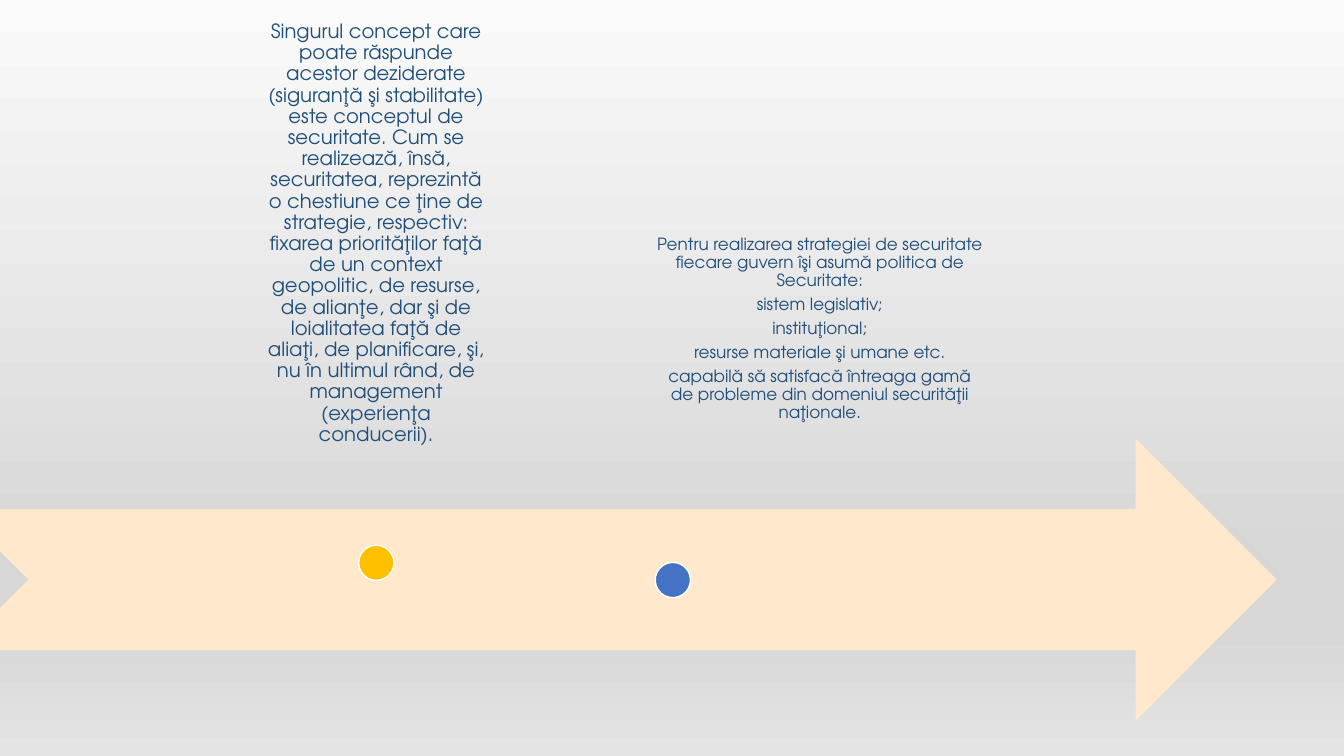
"""Builds the security strategy slide: two statements above a timeline arrow."""
from dataclasses import dataclass

from lxml.etree import SubElement
from pptx import Presentation
from pptx.dml.color import RGBColor
from pptx.enum.shapes import MSO_SHAPE
from pptx.enum.text import MSO_ANCHOR, PP_ALIGN
from pptx.oxml.ns import qn
from pptx.util import Inches, Pt


@dataclass(frozen=True)
class Theme:
    font: str = "TeX Gyre Adventor"
    text: str = "1F4E79"
    arrow: str = "FFE8CC"
    concept_dot: str = "FFC000"
    policy_dot: str = "4472C4"
    dot_outline: str = "FFFFFF"
    backdrop: tuple = ((0, "FAFAFA"), (74, "D7D7D7"), (83, "D7D7D7"), (100, "E4E4E4"))
    concept_size: int = 14
    policy_size: int = 12


theme = Theme()
COLUMNS, ROWS = 32, 18

deck = Presentation()
deck.slide_width, deck.slide_height = Inches(13.33), Inches(7.5)
slide = deck.slides.add_slide(deck.slide_layouts[6])


def cells(column, row, width, height):
    """Turn grid columns and rows into slide lengths."""
    across, down = deck.slide_width / COLUMNS, deck.slide_height / ROWS
    return int(column * across), int(row * down), int(width * across), int(height * down)


def add_filled(preset, place, color):
    """Add a preset shape with a plain fill and no outline."""
    shape = slide.shapes.add_shape(preset, *cells(*place))
    shape.shadow.inherit = False
    shape.fill.solid()
    shape.fill.fore_color.rgb = RGBColor.from_string(color)
    shape.line.fill.background()
    return shape


backdrop = slide.background.fill
backdrop.gradient()
backdrop.gradient_angle = 270
stops = slide.element.find(".//" + qn("a:gsLst"))
for old_stop in list(stops):
    stops.remove(old_stop)
for percent, color in theme.backdrop:
    stop = SubElement(stops, qn("a:gs"), pos=str(percent * 1000))
    SubElement(stop, qn("a:srgbClr"), val=color)

add_filled(MSO_SHAPE.NOTCHED_RIGHT_ARROW, (-1, 10.44, 31.4, 6.72), theme.arrow)

concept = [
    "Singurul concept care poate răspunde acestor deziderate (siguranţă şi stabilitate) "
    "este conceptul de securitate. Cum se realizează, însă, securitatea, reprezintă o "
    "chestiune ce ţine de strategie, respectiv: fixarea priorităţilor faţă de un context "
    "geopolitic, de resurse, de alianţe, dar şi de loialitatea faţă de aliaţi, de "
    "planificare, şi, nu în ultimul rând, de management (experienţa conducerii).",
]
policy = [
    "Pentru realizarea strategiei de securitate fiecare guvern îşi asumă politica de Securitate:",
    "sistem legislativ;",
    "instituţional;",
    "resurse materiale şi umane etc.",
    "capabilă să satisfacă întreaga gamă de probleme din domeniul securităţii naţionale.",
]
statements = [
    (concept, (6.1, 5.81, 5.71, 5.06), MSO_ANCHOR.BOTTOM, theme.concept_size, 0.11),
    (policy, (15.38, 5.4, 8.28, 6.72), MSO_ANCHOR.TOP, theme.policy_size, 0.09),
]
for sentences, place, anchor, size, inset in statements:
    frame = slide.shapes.add_textbox(*cells(*place)).text_frame
    frame.word_wrap = True
    frame.vertical_anchor = anchor
    for side in ("left", "top", "right", "bottom"):
        setattr(frame, f"margin_{side}", Inches(inset))
    frame.text = "\n".join(sentences)
    paragraph_format = {
        "alignment": PP_ALIGN.CENTER,
        "line_spacing": 0.9,
        "space_after": Pt(size * 0.35),
    }
    for paragraph in frame.paragraphs:
        for attribute, value in paragraph_format.items():
            setattr(paragraph, attribute, value)
        for run in paragraph.runs:
            run.font.name = theme.font
            run.font.size = Pt(size)
            run.font.color.rgb = RGBColor.from_string(theme.text)

DOT = 0.84
milestones = [
    (8.54, 12.98, theme.concept_dot, 0),
    (15.6, 13.39, theme.policy_dot, 11.3),
]
for column, row, color, turn in milestones:
    dot = add_filled(MSO_SHAPE.OVAL, (column, row, DOT, DOT), color)
    dot.rotation = turn
    dot.line.color.rgb = RGBColor.from_string(theme.dot_outline)
    dot.line.width = Pt(1)

deck.save("out.pptx")
